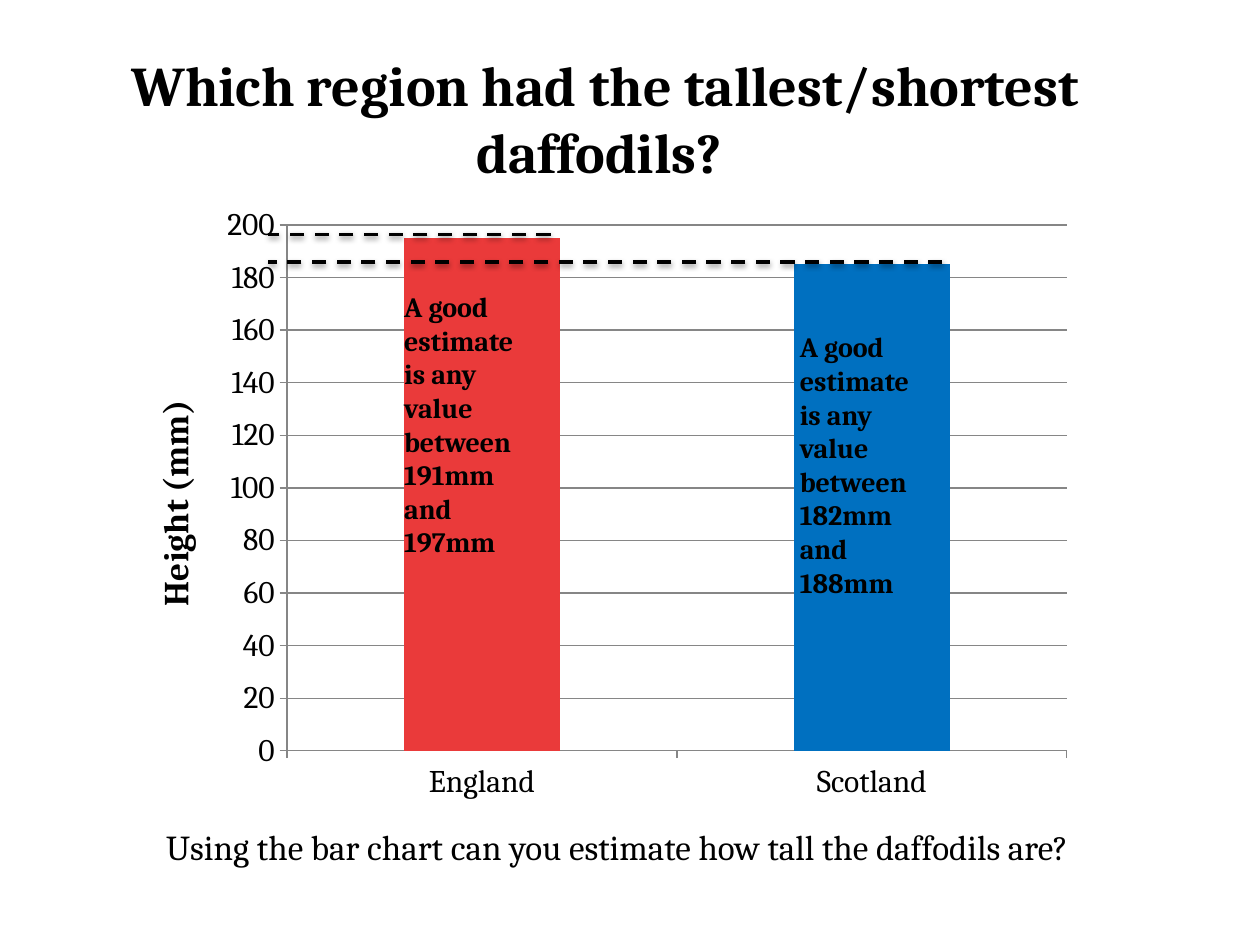
"""Build a slide comparing daffodil heights in two regions."""
from lxml import etree
from pptx import Presentation
from pptx.chart.data import CategoryChartData
from pptx.dml.color import RGBColor
from pptx.enum.chart import XL_CHART_TYPE, XL_TICK_MARK
from pptx.enum.dml import MSO_LINE
from pptx.enum.shapes import MSO_CONNECTOR
from pptx.enum.text import MSO_ANCHOR, PP_ALIGN
from pptx.oxml import parse_xml
from pptx.oxml.ns import qn
from pptx.util import Inches, Pt

COLUMNS = XL_CHART_TYPE.COLUMN_CLUSTERED
STRAIGHT = MSO_CONNECTOR.STRAIGHT
OUTSIDE = XL_TICK_MARK.OUTSIDE
DASH = MSO_LINE.DASH
MIDDLE, TOP = MSO_ANCHOR.MIDDLE, MSO_ANCHOR.TOP
CENTER, LEFT = PP_ALIGN.CENTER, PP_ALIGN.LEFT

FONT, BLACK, GRAY = "Cambria", "000000", "868686"
TITLE = "Which region had the tallest/shortest daffodils?"
QUESTION = "Using the bar chart can you estimate how tall the daffodils are?"
ESTIMATE = "A good estimate is any value between {}mm and {}mm"
AXIS_TITLE = "Height (mm)"
REGIONS = [
    {"name": "England", "height": 195, "color": "EA3A3A", "range": (191, 197),
     "note": (3.11, 2.25, 1.26, 1.65), "guide": (4.37, 1.86)},
    {"name": "Scotland", "height": 185, "color": "0070C0", "range": (182, 188),
     "note": (6.25, 2.57, 1.26, 1.73), "guide": (7.48, 2.08)},
]
GUIDE_END = 2.13
CHART_AREA = (0.98, 1.54, 7.64, 4.91)
PLOT_AREA = {"x": 0.17, "y": 0.05, "w": 0.81, "h": 0.85}
SHADOW = (
    '<a:effectLst xmlns:a="http://schemas.openxmlformats.org/drawingml/2006/main">'
    '<a:outerShdw blurRad="39370" dist="20320" dir="5400000" rotWithShape="0">'
    '<a:srgbClr val="000000"><a:alpha val="38000"/></a:srgbClr>'
    '</a:outerShdw></a:effectLst>'
)


def rgb(color):
    return RGBColor.from_string(color)


def style_font(font, size, bold=False):
    font.name, font.size, font.bold = FONT, Pt(size), bold
    font.color.rgb = rgb(BLACK)


def add_text(page, area, text, size, bold=False, align=LEFT, anchor=TOP):
    frame = page.shapes.add_textbox(*map(Inches, area)).text_frame
    frame.word_wrap = True
    frame.vertical_anchor = anchor
    frame.text = text
    paragraph = frame.paragraphs[0]
    paragraph.alignment = align
    style_font(paragraph.runs[0].font, size, bold)


def add_guide(page, start, level):
    points = map(Inches, (start, level, GUIDE_END, level))
    guide = page.shapes.add_connector(STRAIGHT, *points)
    guide.line.color.rgb = rgb(BLACK)
    guide.line.width = Pt(2)
    guide.line.dash_style = DASH
    guide._element.spPr.append(parse_xml(SHADOW))


def place_plot(chart):
    plot_area = chart._chartSpace.chart.plotArea
    layout = plot_area.find(qn("c:layout"))
    if layout is None:
        layout = etree.Element(qn("c:layout"))
        plot_area.insert(0, layout)
    manual = etree.SubElement(layout, qn("c:manualLayout"))
    settings = {"layoutTarget": "inner", "xMode": "edge", "yMode": "edge", **PLOT_AREA}
    for name, value in settings.items():
        etree.SubElement(manual, qn(f"c:{name}")).set("val", str(value))


def add_height_chart(page):
    data = CategoryChartData()
    data.categories = [region["name"] for region in REGIONS]
    data.add_series("Series 1", [region["height"] for region in REGIONS])
    chart = page.shapes.add_chart(COLUMNS, *map(Inches, CHART_AREA), data).chart
    chart.has_legend = chart.has_title = False
    style_font(chart.font, 10)
    place_plot(chart)

    plot = chart.plots[0]
    plot.vary_by_categories = False
    plot.gap_width = 150
    series = plot.series[0]
    series.format.fill.solid()
    series.format.fill.fore_color.rgb = rgb(REGIONS[-1]["color"])
    for index, region in enumerate(REGIONS):
        fill = series.points[index].format.fill
        fill.solid()
        fill.fore_color.rgb = rgb(region["color"])

    heights = chart.value_axis
    for axis in (chart.category_axis, heights):
        style_font(axis.tick_labels.font, 18)
        axis.major_tick_mark = OUTSIDE
        axis.format.line.color.rgb = rgb(GRAY)
    heights.minimum_scale, heights.maximum_scale = 0, 200
    heights.major_unit = 20
    heights.has_major_gridlines = True
    heights.major_gridlines.format.line.color.rgb = rgb(GRAY)
    frame = heights.axis_title.text_frame
    frame.text = AXIS_TITLE
    style_font(frame.paragraphs[0].runs[0].font, 20, True)


def main():
    deck = Presentation()
    deck.slide_width, deck.slide_height = Inches(10), Inches(7.5)
    page = deck.slides.add_slide(deck.slide_layouts[6])
    add_text(page, (0.67, 0.34, 8.27, 1.18), TITLE + " ", 32, True, CENTER, MIDDLE)
    add_height_chart(page)
    add_text(page, (1.22, 6.5, 8.03, 0.44), QUESTION, 20)
    for region in REGIONS:
        add_guide(page, *region["guide"])
    for region in REGIONS:
        add_text(page, region["note"], ESTIMATE.format(*region["range"]), 16, True)
    deck.save("out.pptx")


if __name__ == "__main__":
    main()
